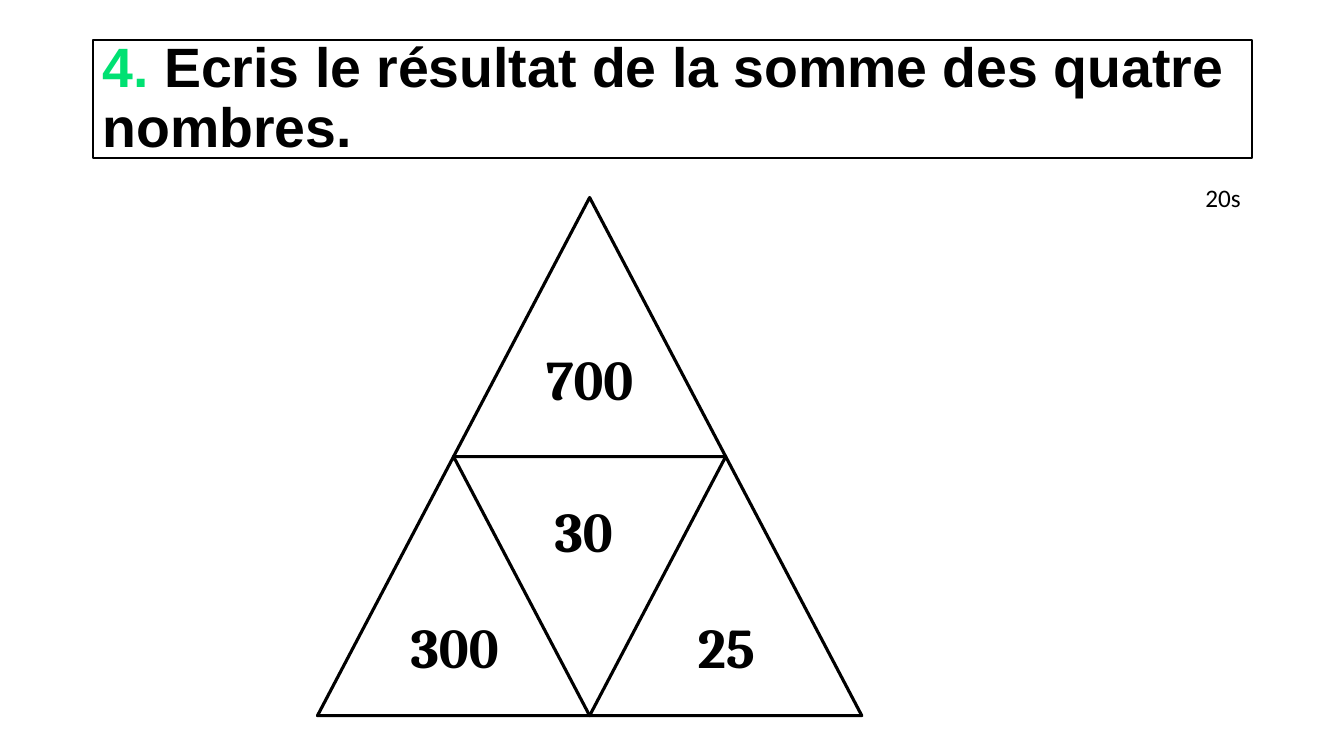
from dataclasses import dataclass
from typing import Optional

from pptx import Presentation
from pptx.dml.color import RGBColor
from pptx.enum import shapes, text
from pptx.util import Pt


@dataclass(frozen=True)
class Theme:
    ink: RGBColor = RGBColor(0x00, 0x00, 0x00)
    accent: RGBColor = RGBColor(0x00, 0xE1, 0x72)
    title_font: str = "Arial"
    number_font: str = "Cambria"
    timer_font: str = "Calibri"
    title_size: float = 39.6
    number_size: float = 40
    timer_size: float = 18
    frame_width: float = 1.5
    triangle_width: float = 2.25


@dataclass(frozen=True)
class Box:
    left: float
    top: float
    width: float
    height: float

    def lengths(self) -> tuple:
        return Pt(self.left), Pt(self.top), Pt(self.width), Pt(self.height)


@dataclass(frozen=True)
class Wording:
    words: str
    font: str
    size: float
    color: RGBColor
    bold: bool = True


@dataclass(frozen=True)
class NumberLabel:
    value: str
    box: Box


THEME = Theme()
SIDE, RISE = 194.4, 185.04
PYRAMID_LEFT, PYRAMID_TOP = 226.8, 141.12
TRIANGLES = [
    Box(PYRAMID_LEFT + (column + (1 - row) / 2) * SIDE, PYRAMID_TOP + row * RISE, SIDE, RISE)
    for row in range(2)
    for column in range(row + 1)
]
NUMBERS = [
    NumberLabel("30", Box(380.16, 351.36, 73.44, 55.44)),
    NumberLabel("25", Box(473.76, 434.16, 90, 55.44)),
    NumberLabel("700", Box(376.56, 242.64, 89.28, 55.44)),
    NumberLabel("300", Box(278.64, 434.16, 92.16, 55.44)),
]


def add_wording(paragraph, wording: Wording) -> None:
    run = paragraph.add_run()
    run.text = wording.words
    run.font.name = wording.font
    run.font.size = Pt(wording.size)
    run.font.bold = wording.bold
    run.font.color.rgb = wording.color


def draw_outline(parent, kind: shapes.MSO_SHAPE, box: Box, line_width: float):
    outline = parent.add_shape(kind, *box.lengths())
    outline.shadow.inherit = False
    outline.fill.background()
    outline.line.color.rgb = THEME.ink
    outline.line.width = Pt(line_width)
    return outline


def draw_label(parent, box: Box, wording: Wording, wrap: bool,
               alignment: Optional[text.PP_ALIGN] = None) -> None:
    frame = parent.add_textbox(*box.lengths()).text_frame
    frame.word_wrap = wrap
    frame.auto_size = text.MSO_AUTO_SIZE.SHAPE_TO_FIT_TEXT
    frame.paragraphs[0].alignment = alignment
    add_wording(frame.paragraphs[0], wording)


def draw_instruction(parent) -> None:
    instruction = draw_outline(parent, shapes.MSO_SHAPE.RECTANGLE,
                               Box(66.24, 28.8, 828, 84.24), THEME.frame_width)
    frame = instruction.text_frame
    frame.word_wrap = True
    frame.vertical_anchor = text.MSO_ANCHOR.MIDDLE
    sentence = frame.paragraphs[0]
    sentence.alignment = text.PP_ALIGN.LEFT
    sentence.line_spacing = 0.9
    for words, color in (
        ("4.", THEME.accent),
        (" Ecris le résultat de la somme des quatre nombres.", THEME.ink),
    ):
        add_wording(sentence, Wording(words, THEME.title_font, THEME.title_size, color))


def draw_pyramid(parent) -> None:
    pyramid = parent.add_group_shape().shapes
    for triangle in TRIANGLES:
        draw_outline(pyramid, shapes.MSO_SHAPE.ISOSCELES_TRIANGLE, triangle, THEME.triangle_width)
    for number in NUMBERS:
        wording = Wording(number.value, THEME.number_font, THEME.number_size, THEME.ink)
        draw_label(pyramid, number.box, wording, True, text.PP_ALIGN.CENTER)


def main() -> None:
    deck = Presentation()
    deck.slide_width, deck.slide_height = Pt(960), Pt(540)
    exercise = deck.slides.add_slide(deck.slide_layouts[6]).shapes
    draw_instruction(exercise)
    draw_pyramid(exercise)
    timer = Wording("20s", THEME.timer_font, THEME.timer_size, THEME.ink, False)
    draw_label(exercise, Box(853.92, 126.72, 40.32, 28.8), timer, False)
    deck.save("out.pptx")


if __name__ == "__main__":
    main()
